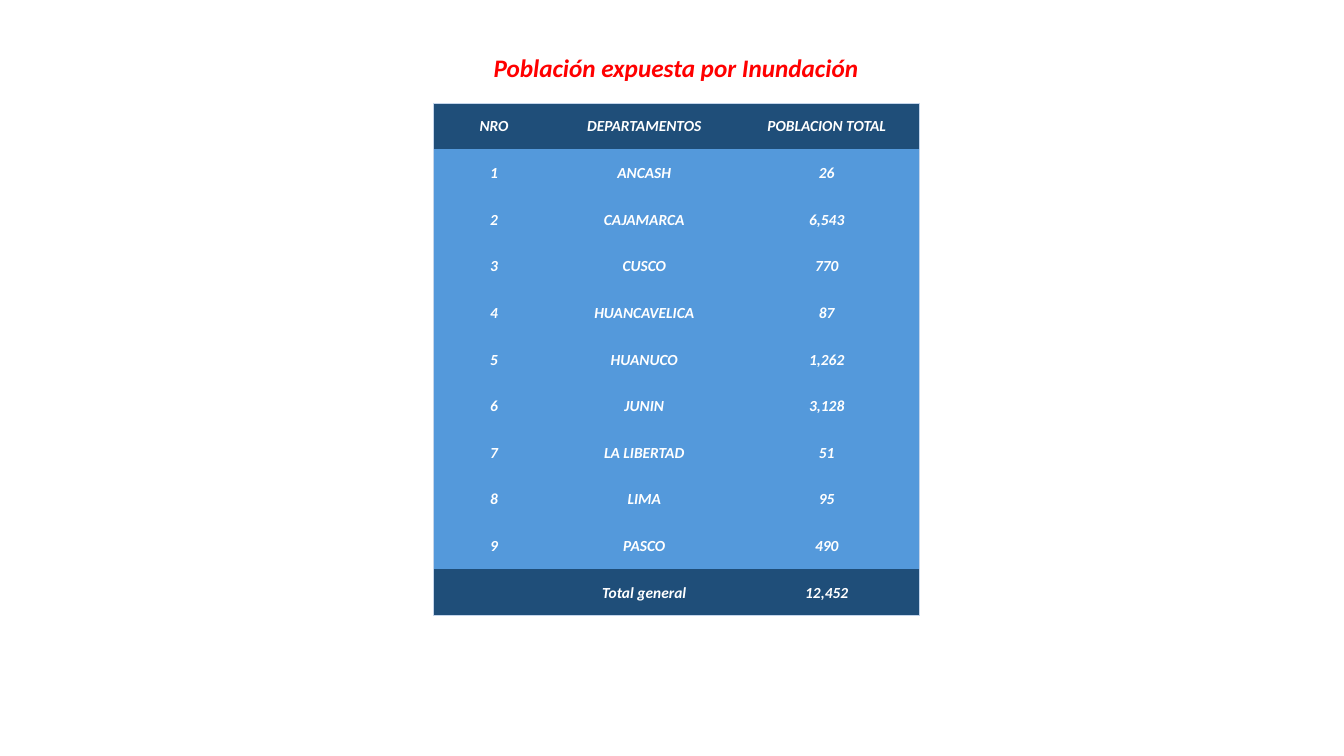
from lxml.etree import SubElement
from pptx import Presentation
from pptx.dml.color import RGBColor
from pptx.enum.text import MSO_ANCHOR, MSO_AUTO_SIZE, PP_ALIGN
from pptx.oxml.ns import qn
from pptx.util import Inches, Pt

TITLE = "Población expuesta por Inundación"
HEADER = ("NRO", "DEPARTAMENTOS", "POBLACION TOTAL")
DEPARTMENTS = [
    ("ANCASH", "26"),
    ("CAJAMARCA", "6,543"),
    ("CUSCO", "770"),
    ("HUANCAVELICA", "87"),
    ("HUANUCO", "1,262"),
    ("JUNIN", "3,128"),
    ("LA LIBERTAD", "51"),
    ("LIMA", "95"),
    ("PASCO", "490"),
]
TOTAL = ("", "Total general", "12,452")

SLIDE_SIZE = (13.33, 7.5)
TITLE_AREA = (4.78, 0.47, 3.85, 0.4)
TABLE_LEFT, TABLE_TOP, TABLE_HEIGHT = 4.3, 1.02, 5.09
COLUMN_WIDTHS = (1.2, 1.78, 1.84)
FONT = "Calibri"
RED, WHITE, NAVY, BLUE, EDGE = "FF0000", "FFFFFF", "1F4E79", "5499DB", "C4D5EB"


def color(value):
    return RGBColor.from_string(value)


def write(frame, text, size, ink):
    para = frame.paragraphs[0]
    para.alignment = PP_ALIGN.CENTER
    span = para.add_run() if text else para
    if text:
        span.text = text
    span.font.name = FONT
    span.font.size = Pt(size)
    span.font.bold = span.font.italic = True
    span.font.color.rgb = color(ink)


def set_borders(cell, outer):
    """Draw the named outer sides and clear the others."""
    properties = cell._tc.get_or_add_tcPr()
    for index, side in enumerate("LRTB"):
        line = SubElement(properties, qn(f"a:ln{side}"))
        if side in outer:
            line.set("w", str(Pt(0.5)))
            fill = SubElement(line, qn("a:solidFill"))
            SubElement(fill, qn("a:srgbClr")).set("val", EDGE)
        else:
            SubElement(line, qn("a:noFill"))
        properties.insert(index, line)


def add_title(slide):
    title = slide.shapes.title
    title.left, title.top, title.width, title.height = map(Inches, TITLE_AREA)
    frame = title.text_frame
    frame.word_wrap = False
    frame.auto_size = MSO_AUTO_SIZE.SHAPE_TO_FIT_TEXT
    frame.vertical_anchor = MSO_ANCHOR.TOP
    write(frame, TITLE, 18, RED)


def add_population_table(slide):
    numbered = [(str(n), *row) for n, row in enumerate(DEPARTMENTS, 1)]
    rows = [HEADER, *numbered, TOTAL]
    last_row, last_column = len(rows) - 1, len(HEADER) - 1
    table = slide.shapes.add_table(
        len(rows), len(HEADER), Inches(TABLE_LEFT), Inches(TABLE_TOP),
        Inches(sum(COLUMN_WIDTHS)), Inches(TABLE_HEIGHT)).table
    for column, width in zip(table.columns, COLUMN_WIDTHS):
        column.width = Inches(width)
    for r, row in enumerate(rows):
        table.rows[r].height = Inches(TABLE_HEIGHT / len(rows))
        for c, text in enumerate(row):
            cell = table.cell(r, c)
            cell.margin_left = cell.margin_right = cell.margin_top = Inches(0.01)
            cell.margin_bottom = 0
            cell.vertical_anchor = MSO_ANCHOR.MIDDLE
            cell.fill.solid()
            cell.fill.fore_color.rgb = color(NAVY if r in (0, last_row) else BLUE)
            write(cell.text_frame, text, 11, WHITE)
            sides = {"L": c == 0, "R": c == last_column, "T": r == 0, "B": r == last_row}
            set_borders(cell, [side for side, is_outer in sides.items() if is_outer])


def main():
    deck = Presentation()
    deck.slide_width, deck.slide_height = map(Inches, SLIDE_SIZE)
    slide = deck.slides.add_slide(deck.slide_layouts[5])
    add_title(slide)
    add_population_table(slide)
    deck.save("out.pptx")


if __name__ == "__main__":
    main()
